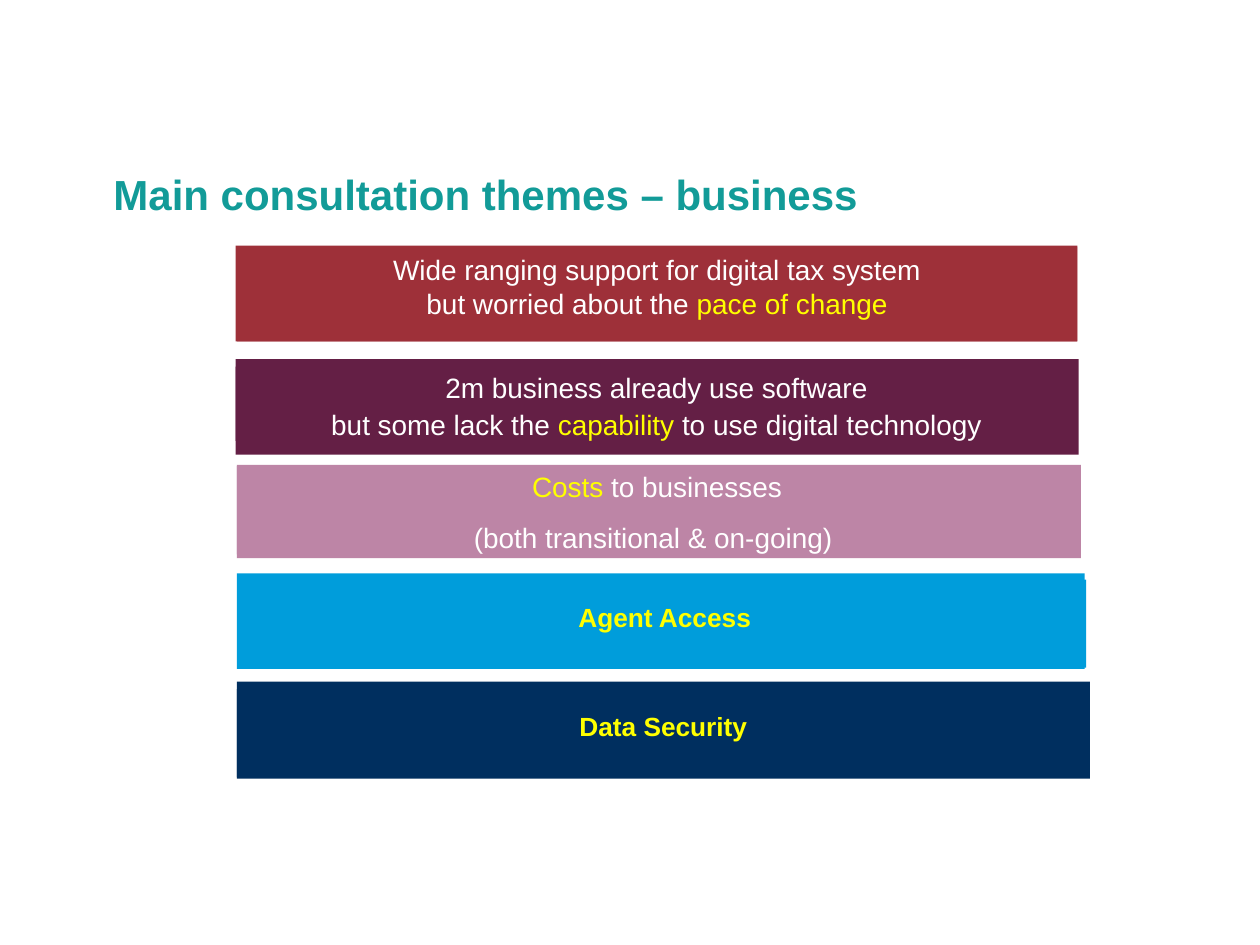
from collections import namedtuple
from dataclasses import dataclass

from pptx import Presentation
from pptx.dml.color import RGBColor
from pptx.enum import shapes, text
from pptx.util import Inches, Pt

Box = namedtuple("Box", "left top width height")
Band = namedtuple("Band", "back front fill size bold leading gap bottom lines")


@dataclass(frozen=True)
class Theme:
    font: str = "Arial"
    title: str = "129B98"
    body: str = "FFFFFF"
    accent: str = "FFFF00"
    red: str = "9E3039"
    plum: str = "641F45"
    pink: str = "BD85A6"
    blue: str = "009DDB"
    navy: str = "002F5F"
    title_size: int = 24
    body_size: int = 16
    label_size: int = 15


THEME = Theme()
BODY, ACCENT = THEME.body, THEME.accent

BANDS = [
    Band(Box(1.87, 1.95, 6.68, 0.76), Box(1.88, 1.96, 6.67, 0.75),
         THEME.red, THEME.body_size, False, 1, 0, 0.13,
         [[("Wide ranging support for digital tax system", BODY)],
          [("but worried about the ", BODY), ("pace of change", ACCENT)]]),
    Band(Box(1.87, 2.85, 6.69, 0.76), Box(1.87, 2.91, 6.68, 0.59),
         THEME.plum, THEME.body_size, False, 1.1, 0, 0,
         [[("2m business already use software", BODY)],
          [("but some lack the ", BODY), ("capability", ACCENT),
           (" to use digital technology", BODY)]]),
    Band(Box(1.88, 3.69, 6.7, 0.74), Box(1.88, 3.7, 6.67, 0.7),
         THEME.pink, THEME.body_size, False, 1.1, 8, 0,
         [[("Costs", ACCENT), (" to businesses", BODY)],
          [("(both transitional & on-going) ", BODY)]]),
    Band(Box(1.88, 4.55, 6.73, 0.76), Box(1.93, 4.6, 6.69, 0.7),
         THEME.blue, THEME.label_size, True, 1.1, 0, 0.13,
         [[("Agent Access", ACCENT)]]),
    Band(Box(1.88, 5.41, 6.77, 0.76), Box(1.88, 5.47, 6.77, 0.71),
         THEME.navy, THEME.label_size, True, 1.1, 0, 0.15,
         [[("Data Security", ACCENT)]]),
]


def set_margins(frame, left, top, right, bottom):
    frame.margin_left, frame.margin_top = Inches(left), Inches(top)
    frame.margin_right, frame.margin_bottom = Inches(right), Inches(bottom)


def style_span(span, size, color, bold):
    span.font.name = THEME.font
    span.font.size = Pt(size)
    span.font.bold = bold
    span.font.color.rgb = RGBColor.from_string(color)


def add_title(page, box, words):
    title = page.shapes.title
    title.left, title.top, title.width, title.height = map(Inches, box)
    frame = title.text_frame
    frame.text = words
    frame.word_wrap = True
    frame.auto_size = text.MSO_AUTO_SIZE.NONE
    frame.vertical_anchor = text.MSO_ANCHOR.TOP
    set_margins(frame, 0.07, 0.07, 0.07, 0.07)
    para = frame.paragraphs[0]
    para.alignment = text.PP_ALIGN.LEFT
    style_span(para.runs[0], THEME.title_size, THEME.title, True)


def add_panel(group, box, fill):
    panel = group.shapes.add_shape(shapes.MSO_SHAPE.RECTANGLE, *map(Inches, box))
    panel.shadow.inherit = False
    panel.fill.solid()
    panel.fill.fore_color.rgb = RGBColor.from_string(fill)
    panel.line.fill.background()
    return panel


def add_band(page, band):
    group = page.shapes.add_group_shape()
    add_panel(group, band.back, band.fill)
    frame = add_panel(group, band.front, band.fill).text_frame
    frame.word_wrap = True
    frame.vertical_anchor = text.MSO_ANCHOR.MIDDLE
    set_margins(frame, 0, 0, 0, band.bottom)
    for index, line in enumerate(band.lines):
        para = frame.add_paragraph() if index else frame.paragraphs[0]
        para.alignment = text.PP_ALIGN.CENTER
        para.line_spacing = band.leading
        para.space_before = Pt(band.gap if index else 0)
        for words, color in line:
            span = para.add_run()
            span.text = words
            style_span(span, band.size, color, band.bold)


def main():
    deck = Presentation()
    deck.slide_width, deck.slide_height = Inches(10), Inches(7.5)
    page = deck.slides.add_slide(deck.slide_layouts[5])
    add_title(page, Box(0.83, 1.27, 7.94, 0.67), "Main consultation themes – business")
    for band in BANDS:
        add_band(page, band)
    deck.save("out.pptx")


if __name__ == "__main__":
    main()
